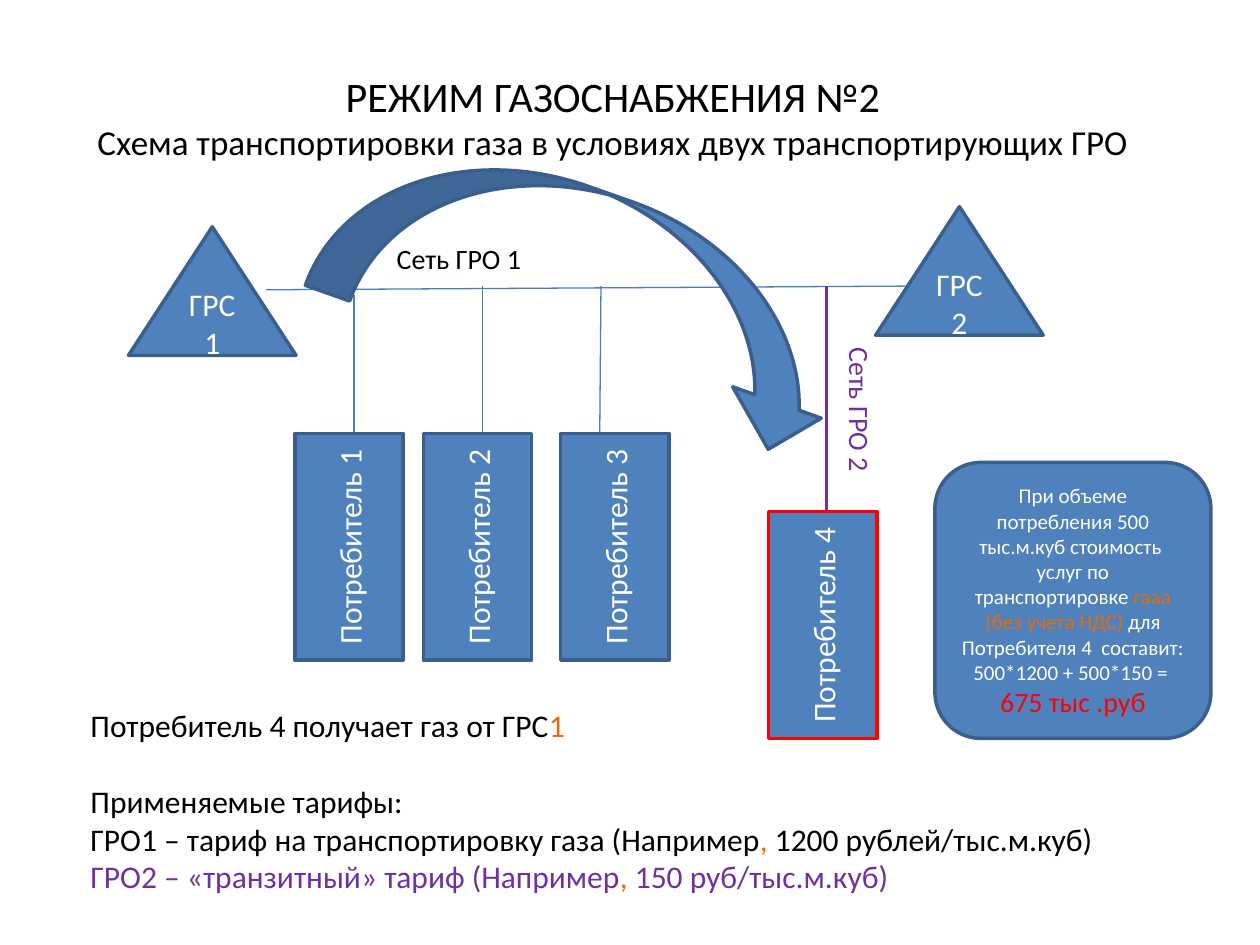
import pptx
import pptx.dml.color
import pptx.enum.shapes
import pptx.enum.text
import pptx.oxml.ns
import pptx.util
from lxml import etree

Inches = pptx.util.Inches
Pt = pptx.util.Pt
KIND = pptx.enum.shapes.MSO_SHAPE
ALIGN = pptx.enum.text.PP_ALIGN
ANCHOR = pptx.enum.text.MSO_ANCHOR

HUES = {
    "blue": "4F81BD", "edge": "3A5F8C", "wire": "4B7EBC", "red": "FF0000",
    "violet": "7030A0", "orange": "E46C0A", "black": "000000", "white": "FFFFFF",
}


def hue(name):
    return pptx.dml.color.RGBColor.from_string(HUES[name])


class Draw:
    def __init__(self, slide, font="Calibri"):
        self.slide = slide
        self.font = font

    def label(self, frame, paras, size, color, align, anchor, gaps):
        """Fill a frame; a run is (text, color, size), and "\\n" breaks the line."""
        for key, value in {"word_wrap": True, "vertical_anchor": anchor}.items():
            setattr(frame, key, value)
        for i, runs in enumerate(paras):
            para = frame.paragraphs[0] if i == 0 else frame.add_paragraph()
            para.alignment = align
            if i in gaps:
                para.space_before = Pt(gaps[i])
            for text, *look in runs:
                if text == "\n":
                    para.add_line_break()
                    continue
                run = para.add_run()
                run.text = text
                tint = look[0] if look else color
                points = look[1] if len(look) > 1 else size
                for key, value in {"name": self.font, "size": Pt(points)}.items():
                    setattr(run.font, key, value)
                run.font.color.rgb = hue(tint)

    def text(self, box, paras, size=18, color="black", align=ALIGN.LEFT,
             anchor=ANCHOR.TOP, turn=0, gaps=()):
        item = self.slide.shapes.add_textbox(*map(Inches, box))
        item.rotation = turn
        self.label(item.text_frame, paras, size, color, align, anchor, gaps)

    def shape(self, kind, box, paras=(), size=18, edge="edge", turn=0):
        item = self.slide.shapes.add_shape(kind, *map(Inches, box))
        item.shadow.inherit = False
        item.rotation = turn
        item.fill.solid()
        item.fill.fore_color.rgb = hue("blue")
        item.line.color.rgb = hue(edge)
        item.line.width = Pt(2)
        self.label(item.text_frame, paras, size, "white", ALIGN.CENTER,
                   ANCHOR.MIDDLE, ())
        return item

    def line(self, start, end, color="wire", width=0.75):
        item = self.slide.shapes.add_connector(
            pptx.enum.shapes.MSO_CONNECTOR.STRAIGHT, *map(Inches, start + end))
        item.line.color.rgb = hue(color)
        item.line.width = Pt(width)
        etree.SubElement(item._element.spPr, pptx.oxml.ns.qn("a:effectLst"))


def main():
    deck = pptx.Presentation()
    deck.slide_width, deck.slide_height = Inches(10), Inches(7.5)
    draw = Draw(deck.slides.add_slide(deck.slide_layouts[6]))

    draw.text((0.23, 0.3, 9.27, 1.25), [[
        ("РЕЖИМ ГАЗОСНАБЖЕНИЯ №2", "black", 24), ("\n",),
        ("Схема транспортировки газа в условиях двух транспортирующих ГРО",)]],
        size=20, align=ALIGN.CENTER, anchor=ANCHOR.MIDDLE)

    # Main pipe with its branches
    draw.line((2.11, 2.3), (7.34, 2.27))
    for top, foot in [((2.81, 2.34), (2.81, 3.52)),
                      ((3.83, 2.27), (3.83, 3.44)),
                      ((4.77, 2.27), (4.76, 3.44))]:
        draw.line(top, foot)
    draw.line((6.56, 2.27), (6.56, 4.06), "violet", 2)

    users = [(1.87, 3.91, "edge"), (2.89, 3.91, "edge"),
             (3.98, 3.91, "edge"), (5.63, 4.53, "red")]
    for num, (left, top, edge) in enumerate(users, 1):
        draw.shape(KIND.RECTANGLE, (left, top, 1.8, 0.86),
                   [[(f"Потребитель {num}",)]], edge=edge, turn=270)

    for num, (left, top) in enumerate([(1.02, 1.8), (6.95, 1.64)], 1):
        draw.shape(KIND.ISOSCELES_TRIANGLE, (left, top, 1.33, 1.02),
                   [[(f"ГРС {num}",)]])

    draw.text((3.05, 1.87, 1.72, 0.37), [[("Сеть ГРО 1",)]], size=16)
    draw.text((6.16, 3.14, 1.33, 0.37), [[("Сеть ГРО 2",)]],
              size=16, color="violet", turn=90)

    flow = draw.shape(KIND.CURVED_RIGHT_ARROW, (3.94, 0.14, 1.49, 4.27), turn=289.5)
    flow._element.spPr.xfrm.set("flipH", "1")

    draw.text((0.62, 5.55, 8.2, 1.62), [
        [("Потребитель 4 получает газ от ГРС",), ("1", "orange")],
        [("Применяемые тарифы:",)],
        [("ГРО1 – тариф на транспортировку газа (Например",), (",", "orange"),
         (" 1200 рублей/тыс.м.куб)",)],
        [("ГРО2 – «транзитный» тариф (Например", "violet"), (",", "orange"),
         (" 150 руб/тыс.м.куб)", "violet")],
    ], gaps={1: 22})

    draw.shape(KIND.ROUNDED_RECTANGLE, (7.42, 3.67, 2.19, 2.19), [
        [("При объеме потребления 500 тыс.м.куб стоимость  услуг по транспортировке ",),
         ("гааа (без учета НДС)", "orange"),
         (" для Потребителя 4  составит:",)],
        [("500*1200 + 500*150 = ",)],
        [("675 тыс .руб", "red", 16)],
    ], size=12)

    deck.save("out.pptx")


if __name__ == "__main__":
    main()
